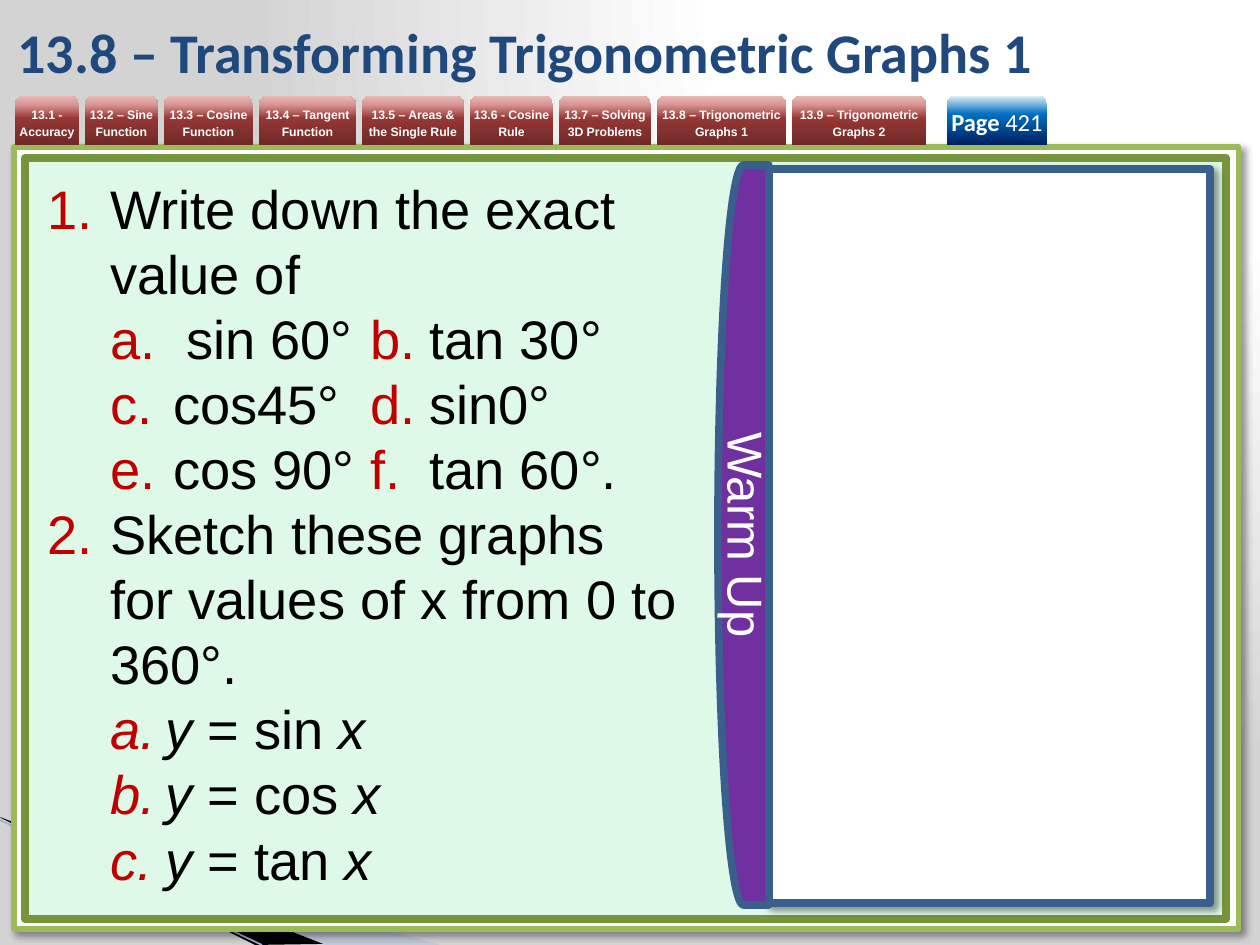
import pptx
import pptx.util
import pptx.dml.color
import pptx.enum.shapes
import pptx.enum.text
import pptx.oxml
import pptx.oxml.ns

RGB = pptx.dml.color.RGBColor
KIND = pptx.enum.shapes.MSO_SHAPE
ALIGN = pptx.enum.text.PP_ALIGN
MIDDLE = pptx.enum.text.MSO_ANCHOR.MIDDLE
Pt = pptx.util.Pt
qn = pptx.oxml.ns.qn
SCALE = 914400 / 126

WHITE = RGB(0xFF, 0xFF, 0xFF)
BLACK = RGB(0, 0, 0)
GREY = RGB(0xD3, 0xD3, 0xD3)
RED = RGB(0xC0, 0, 0)
NAVY = RGB(0x1F, 0x49, 0x7D)
STEEL = RGB(0x3A, 0x5F, 0x8C)
LIME = RGB(0x9B, 0xBB, 0x59)
OLIVE = RGB(0x77, 0x93, 0x3C)
MINT = RGB(0xDF, 0xF9, 0xE8)
PURPLE = RGB(0x70, 0x30, 0xA0)
PALE = RGB(0xA7, 0xB9, 0xDB)
BLUE = RGB(0x9E, 0xB3, 0xD6)
MAROON = [(0, RGB(0x6F, 0x29, 0x27)), (54, RGB(0x95, 0x37, 0x35)),
          (83, RGB(0xD9, 0x96, 0x94)), (100, RGB(0xE6, 0xB9, 0xB8))]
OCEAN = [(0, RGB(0, 0x20, 0x60)), (63, RGB(0, 0x70, 0xC0)),
         (100, RGB(0xDB, 0xEE, 0xF4))]
GLOW = [(0, WHITE), (40, WHITE), (100, GREY)]

TABS = [("13.1 - Accuracy", 64), ("13.2 – Sine Function", 73),
        ("13.3 – Cosine Function", 89), ("13.4 – Tangent Function", 97),
        ("13.5 – Areas & the Single Rule", 102), ("13.6 - Cosine Rule", 83),
        ("13.7 – Solving 3D Problems", 92),
        ("13.8 – Trigonometric Graphs 1", 129),
        ("13.9 – Trigonometric Graphs 2", 134)]

TAB = dict(name="Arial", size=Pt(7), bold=True, color=WHITE)
PAGE = dict(name="Calibri", size=Pt(14), bold=True, color=WHITE)
SIDE = dict(name="Arial", size=Pt(28), color=WHITE)
TITLE = dict(name="Calibri", size=Pt(32), bold=True, color=NAVY)
BODY = dict(name="Arial", size=Pt(31), color=BLACK)
MARK = BODY | dict(color=RED)
SLANT = BODY | dict(italic=True)


def px(*nums):
    return [round(num * SCALE) for num in nums]


def add_xml(node, text):
    start, rest = text.split(" ", 1)
    item = pptx.oxml.parse_xml(f"{start} {pptx.oxml.ns.nsdecls('a')} {rest}")
    node.append(item)


def style(font, look):
    for key, value in look.items():
        if key == "color":
            font.color.rgb = value
        else:
            setattr(font, key, value)


def write(para, *runs):
    for text, look in runs:
        run = para.add_run()
        run.text = text
        style(run.font, look)


def blend(fill, root, stops, aim):
    fill.gradient()
    grad = root.find(".//" + qn("a:gradFill"))
    for child in list(grad):
        grad.remove(child)
    marks = "".join(f'<a:gs pos="{pos * 1000}"><a:srgbClr val="{tint}"/></a:gs>'
                    for pos, tint in stops)
    add_xml(grad, f"<a:gsLst >{marks}</a:gsLst>")
    add_xml(grad, aim)


def paint(shape, fill, line=None, width=0):
    shape.shadow.inherit = False
    if isinstance(fill, list):
        blend(shape.fill, shape.element.spPr, fill, '<a:lin ang="16200000" scaled="0"/>')
    else:
        shape.fill.solid()
        shape.fill.fore_color.rgb = fill
    if line is None:
        shape.line.fill.background()
    else:
        shape.line.color.rgb = line
        shape.line.width = Pt(width)


def add_shape(slide, kind, box, fill, line=None, width=0):
    shape = slide.shapes.add_shape(kind, *px(*box))
    paint(shape, fill, line, width)
    return shape


def cast(shape):
    node = shape.element.spPr.find(qn("a:effectLst"))
    add_xml(node, '<a:outerShdw blurRad="50800" dist="38100" dir="2700000">'
                  '<a:srgbClr val="000000"><a:alpha val="40000"/></a:srgbClr>'
                  '</a:outerShdw>')


def add_wedge(slide, points, fill):
    form = slide.shapes.build_freeform(*points[0], scale=SCALE)
    form.add_line_segments(points[1:])
    shape = form.convert_to_shape()
    paint(shape, fill)
    return shape


def add_tab(slide, left, width, fill, *runs):
    shape = add_shape(slide, KIND.ROUND_2_SAME_RECTANGLE, (left, 96, width, 49), fill)
    frame = shape.text_frame
    for side in ("left", "top", "right", "bottom"):
        setattr(frame, "margin_" + side, 0)
    frame.vertical_anchor = MIDDLE
    para = frame.paragraphs[0]
    para.alignment = ALIGN.CENTER
    write(para, *runs)
    return para


def add_text(slide, box):
    frame = slide.shapes.add_textbox(*px(*box)).text_frame
    frame.word_wrap = True
    return frame


def add_item(para, level, kind, start, left, hang, *runs):
    para.level = level
    para.line_spacing = Pt(37.2)
    prop = para._p.get_or_add_pPr()
    prop.set("marL", str(*px(left)))
    prop.set("indent", str(*px(-hang)))
    add_xml(prop, f'<a:buClr ><a:srgbClr val="{RED}"/></a:buClr>')
    add_xml(prop, '<a:buFont typeface="+mj-lt"/>')
    add_xml(prop, f'<a:buAutoNum type="{kind}" startAt="{start}"/>')
    stops = "".join(f'<a:tab pos="{pos}" algn="l"/>' for pos in px(323, 382))
    add_xml(prop, f"<a:tabLst >{stops}</a:tabLst>")
    write(para, *runs)


def add_tasks(slide):
    frame = add_text(slide, (35, 165, 655, 736))
    frame.margin_top = px(10)[0]
    num, char = "arabicPeriod", "alphaLcPeriod"
    items = [(0, num, 1, 63, 63, ("Write down the exact value of", BODY))]
    pairs = [("sin 60°", "b.", "tan 30°", 139), ("cos45°", "d.", "sin0°", 126),
             ("cos 90°", "f.", "tan 60°.", 126)]
    for row, (first, mark, second, left) in enumerate(pairs):
        items.append((1, char, 2 * row + 1, left, left - 63, (first + "\t", BODY),
                      (mark + "\t", MARK), (second, BODY)))
    items.append((0, num, 2, 63, 63,
                  ("Sketch these graphs for values of x from 0 to 360°.", BODY)))
    for row, name in enumerate(("sin", "cos", "tan"), 1):
        items.append((1, char, row, 118, 55, ("y ", SLANT),
                      (f"= {name} ", BODY), ("x", SLANT)))
    for row, item in enumerate(items):
        para = frame.add_paragraph() if row else frame.paragraphs[0]
        add_item(para, *item)


def add_swoosh(slide):
    wedge = add_wedge(slide, [(0, 819), (440, 945), (326, 945), (0, 818)], PALE)
    tint = wedge.element.spPr.find(".//" + qn("a:srgbClr"))
    add_xml(tint, '<a:alpha val="40000"/>')
    add_wedge(slide, [(0, 817), (323, 944), (255, 945), (1, 818)], BLACK)
    begin, end = px(0, 820), px(262, 945)
    line = slide.shapes.add_connector(pptx.enum.shapes.MSO_CONNECTOR.STRAIGHT,
                                      *begin, *end)
    line.line.color.rgb = BLUE
    line.line.width = Pt(0.95)
    add_xml(line._element.spPr, "<a:effectLst />")


def add_side(slide):
    shape = add_shape(slide, KIND.FLOWCHART_DELAY, (718, 165, 51, 740),
                      PURPLE, STEEL, 4.33)
    shape.element.spPr.find(qn("a:xfrm")).set("flipH", "1")
    frame = shape.text_frame
    frame.vertical_anchor = MIDDLE
    frame._txBody.bodyPr.set("vert", "vert")
    para = frame.paragraphs[0]
    para.alignment = ALIGN.CENTER
    write(para, ("Warm Up", SIDE))


def main():
    deck = pptx.Presentation()
    deck.slide_width, deck.slide_height = px(1260, 945)
    slide = deck.slides.add_slide(deck.slide_layouts[6])
    blend(slide.background.fill, slide.element, GLOW,
          '<a:path path="circle"><a:fillToRect l="65000" b="98000"/></a:path>')
    add_swoosh(slide)
    cast(add_shape(slide, KIND.RECTANGLE, (14, 147, 1225, 782), WHITE, LIME, 3))
    add_shape(slide, KIND.RECTANGLE, (25, 158, 1201, 761), MINT, OLIVE, 4.33)
    cast(add_shape(slide, KIND.RECTANGLE, (769, 169, 441, 734), WHITE, STEEL, 4.33))
    left = 15
    for label, width in TABS:
        para = add_tab(slide, left, width, MAROON, (label, TAB))
        para.line_spacing = Pt(10)
        left += width + 6
    add_tab(slide, 947, 100, OCEAN, ("Page ", PAGE), ("421", PAGE | dict(bold=False)))
    add_side(slide)
    frame = add_text(slide, (5, 6, 1042, 90))
    frame.vertical_anchor = MIDDLE
    write(frame.paragraphs[0], ("13.8 – Transforming Trigonometric Graphs 1", TITLE))
    add_tasks(slide)
    deck.save("out.pptx")


if __name__ == "__main__":
    main()
